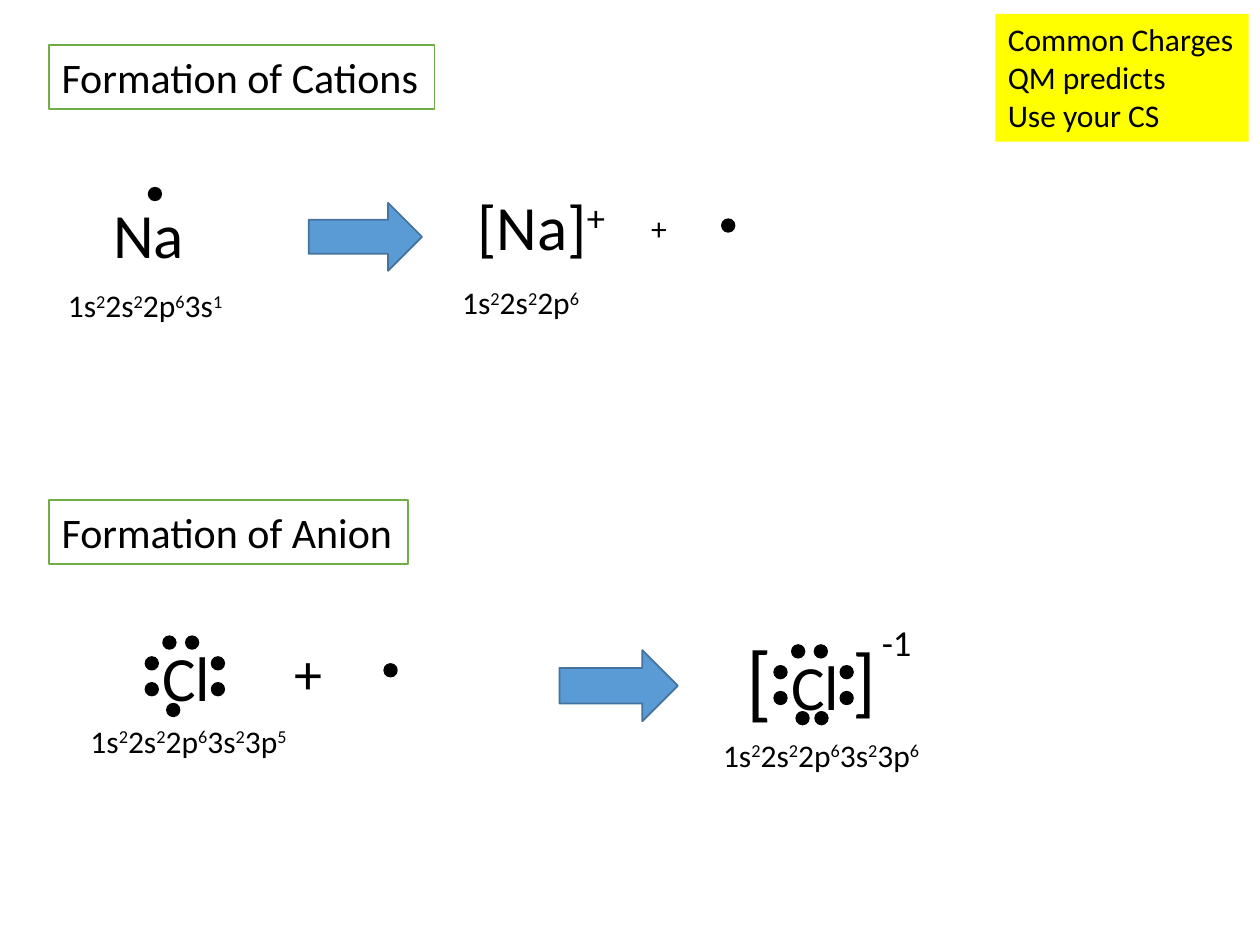
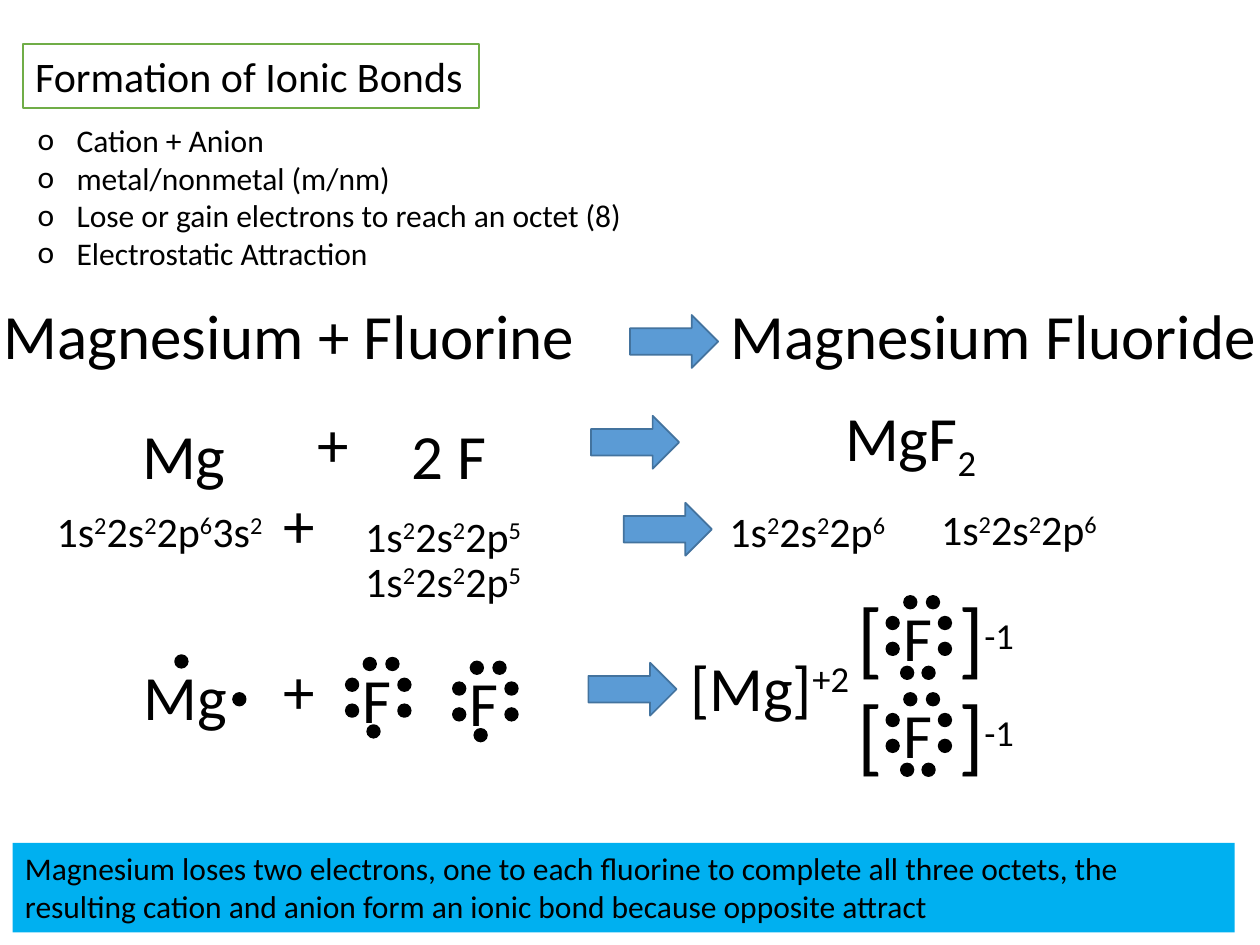
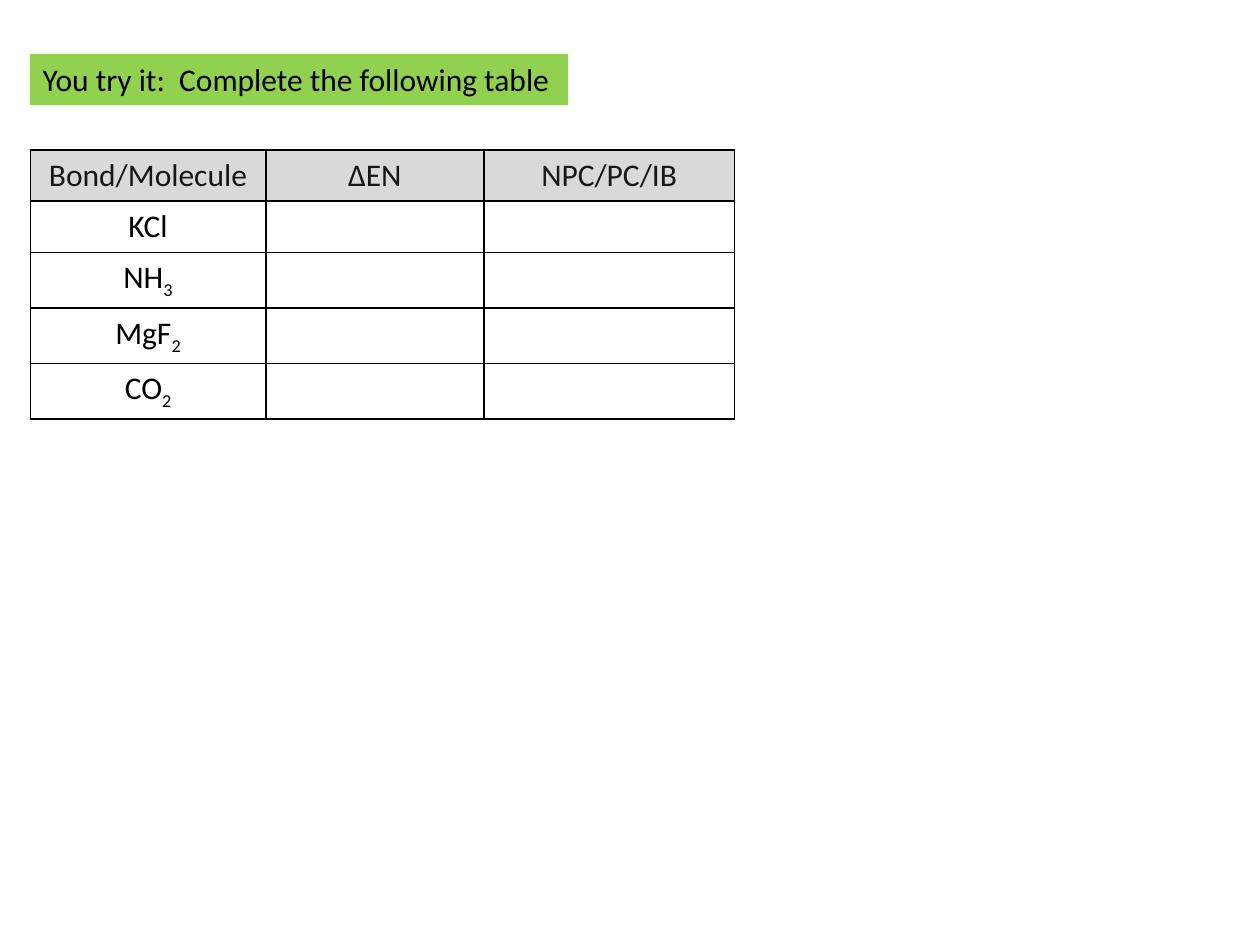
from dataclasses import dataclass

from lxml import etree
from pptx import Presentation
from pptx.dml.color import RGBColor
from pptx.enum.shapes import MSO_SHAPE
from pptx.enum.text import MSO_AUTO_SIZE, PP_ALIGN
from pptx.oxml.ns import qn
from pptx.util import Inches, Pt

ARROW, DOT = MSO_SHAPE.RIGHT_ARROW, MSO_SHAPE.OVAL
GROW, CENTER = MSO_AUTO_SIZE.SHAPE_TO_FIT_TEXT, PP_ALIGN.CENTER


@dataclass(frozen=True)
class Theme:
    font: str = "Calibri"
    ink: str = "000000"
    paper: str = "FFFFFF"
    title_line: str = "70AD47"
    arrow: str = "5B9BD5"
    arrow_line: str = "43739E"
    yellow: str = "FFFF00"
    blue: str = "00B0F0"
    green: str = "92D050"
    header: str = "D9D9D9"
    header_ink: str = "181717"
    body: int = 18
    title: int = 24
    plus: int = 32
    symbol: int = 36
    close_bracket: int = 44
    bracket: int = 48


THEME = Theme()
RAISED, LOWERED = 30, -25

# The slide is a grid of 100 columns by 75 rows
COLUMNS, ROWS = 100, 75
DOT_SIZE = 1


def grid(cells):
    return Inches(cells / 10)


def configuration(orbitals):
    """Turn '1s2 2p6' into runs with raised electron counts."""
    return [run for orbital in orbitals.split()
            for run in ((orbital[:-1], 0), (orbital[-1], RAISED))]


NEON = configuration("1s2 2s2 2p6")
FLUORINE = configuration("1s2 2s2 2p5")

# Content: titles are (text, left, top, width)
CATION_TITLE = ("Formation of Cations", 3.9, 3.6, 30.6)
ANION_TITLE = ("Formation of Anion", 3.9, 39.7, 28.5)
BOND_TITLE = ("Formation of Ionic Bonds", 1.8, 3.5, 36.2)

# Labels are (text or runs, left, top, width, size)
ION_LABELS = [
    (configuration("1s2 2s2 2p6 3s1"), 4.4, 22.2, 14.9, THEME.body),
    ([("[Na]", 0), ("+", RAISED)], 36.9, 14.4, 12.5, THEME.symbol),
    (NEON, 35.7, 22, 11.7, THEME.body),
    ("+", 50.7, 16.1, 3.3, THEME.body),
    (configuration("1s2 2s2 2p6 3s2 3p5"), 6.2, 56.8, 18.3, THEME.body),
    (configuration("1s2 2s2 2p6 3s2 3p6"), 56.4, 57.9, 18.3, THEME.body),
    ("+", 22.4, 50.2, 4.3, THEME.plus),
    ("[", 58.3, 49.3, 4.1, THEME.bracket),
    ("]", 66.7, 49.6, 3.9, THEME.close_bracket),
    ([("-1", RAISED)], 69, 48.1, 4.8, THEME.symbol),
]
BOND_LABELS = [
    ("Magnesium + Fluorine", -0.7, 23, 47.8, THEME.symbol),
    ("Magnesium Fluoride", 57, 23, 44, THEME.symbol),
    ("Mg", 10.3, 32.6, 8.7, THEME.symbol),
    ("+", 24.2, 31.6, 4.5, THEME.symbol),
    ("2 F", 31.7, 32.6, 8, THEME.symbol),
    ([("MgF", 0), ("2", LOWERED)], 66.1, 31.1, 12.7, THEME.symbol),
    (configuration("1s2 2s2 2p6 3s2"), 3.5, 39.6, 19.1, THEME.title),
    ("+", 21.5, 38, 4.5, THEME.symbol),
    (FLUORINE, 28, 40, 14.9, THEME.title),
    (FLUORINE, 28, 43.6, 14.9, THEME.title),
    (NEON, 56.9, 39.6, 14.9, THEME.title),
    (NEON, 73.7, 39.5, 14.9, THEME.title),
    ("+", 21.5, 51.2, 4.5, THEME.symbol),
    ([("[Mg]", 0), ("+2", RAISED)], 53.8, 51, 15.2, THEME.symbol),
]

# Arrows are (left, top, width)
ION_ARROWS = [(24.5, 16.1, 9), (44.4, 51.6, 9.4)]
BOND_ARROWS = [(50, 25, 7), (46.9, 33, 7), (49.5, 39.9, 7), (46.7, 52.6, 7)]
FREE_ELECTRONS = [(57.3, 17.4), (30.5, 52.7)]

# Electron places are (across, down) from the corner of the symbol's box
SYMBOL_WIDTH = {"Na": 7.7, "Mg": 8.7, "Cl": 5.9, "F": 4.3}
RIGHT_DOTS = {"Cl": 4.9, "F": 3.8}
ONE_BELOW = [(1.35, 5.65)]
CHLORIDE_BELOW = [(1.4, 5.6), (2.9, 5.6)]
FLUORIDE_BELOW = [(0.8, 5.9), (2.5, 5.9)]


def shell(symbol, below):
    """Two dots on each side and above, plus those below."""
    sides = [(x, y) for x in (-0.35, RIGHT_DOTS[symbol]) for y in (1.95, 4)]
    return sides + [(1.05, 0.3), (2.85, 0.3)] + below


# Atoms are (symbol, left, top, electrons)
ION_ATOMS = [
    ("Na", 8, 15, [(3.8, -0.1)]),
    ("Cl", 11.9, 50.2, shell("Cl", ONE_BELOW)),
    ("Cl", 61.8, 50.9, shell("Cl", CHLORIDE_BELOW)),
]
FLUORIDES = [("F", 70.7, top, shell("F", FLUORIDE_BELOW)) for top in (47, 54.7)]
BOND_ATOMS = [
    ("Mg", 10.4, 51.7, [(3.5, 0.3), (8.1, 3.3)]),
    ("F", 27.8, 51.9, shell("F", ONE_BELOW)),
    ("F", 36.3, 52.2, shell("F", ONE_BELOW)),
] + FLUORIDES

REMINDERS = ["Common Charges", "QM predicts", "Use your CS"]
BOND_FACTS = ["Cation + Anion", "metal/nonmetal (m/nm)",
              "Lose or gain electrons to reach an octet (8)",
              "Electrostatic Attraction"]
SUMMARY = ("Magnesium loses two electrons, one to each fluorine to complete "
           "all three octets, the resulting cation and anion form an ionic "
           "bond because opposite attract")
TASK = "You try it:  Complete the following table"
TABLE_HEADER = ["Bond/Molecule", "ΔEN", "NPC/PC/IB"]
MOLECULES = ["KCl", [("NH", 0), ("3", LOWERED)],
             [("MgF", 0), ("2", LOWERED)], [("CO", 0), ("2", LOWERED)]]
TABLE_COLUMNS, TABLE_ROW = [18.7, 17.3, 19.9], 4.06


def color(value):
    return RGBColor.from_string(value)


def paint(shape, fill, line=None):
    shape.fill.solid()
    shape.fill.fore_color.rgb = color(fill)
    if line:
        shape.line.color.rgb = color(line)
        shape.line.width = Pt(1)


def write(para, content, size, ink=THEME.ink):
    runs = [(content, 0)] if isinstance(content, str) else content
    for text, shift in runs:
        span = para.add_run()
        span.text = text
        span.font.name = THEME.font
        span.font.size = Pt(size)
        span.font.color.rgb = color(ink)
        if shift:
            span._r.get_or_add_rPr().set("baseline", str(shift * 1000))


def add_text(shapes, lines, left, top, width, size, wrap=False, rows=None):
    """Add one paragraph per line; the height follows from the type size."""
    height = rows or len(lines) * size * 12.2 / 72 + 1
    box = shapes.add_textbox(grid(left), grid(top), grid(width), grid(height))
    frame = box.text_frame
    frame.word_wrap = wrap
    frame.auto_size = GROW
    for index, line in enumerate(lines):
        para = frame.add_paragraph() if index else frame.paragraphs[0]
        write(para, line, size)
    return box


def add_title(slide, text, left, top, width):
    box = add_text(slide.shapes, [text], left, top, width, THEME.title)
    paint(box, THEME.paper, THEME.title_line)


def add_labels(slide, labels):
    for content, *place in labels:
        add_text(slide.shapes, [content], *place)


def add_figure(shapes, kind, left, top, width, height, fill, line):
    figure = shapes.add_shape(kind, grid(left), grid(top),
                              grid(width), grid(height))
    figure.shadow.inherit = False
    paint(figure, fill, line)


def add_arrows(slide, arrows):
    for left, top, width in arrows:
        add_figure(slide.shapes, ARROW, left, top, width, width * 0.6,
                   THEME.arrow, THEME.arrow_line)


def add_electron(shapes, left, top):
    add_figure(shapes, DOT, left, top, DOT_SIZE, DOT_SIZE,
               THEME.ink, THEME.ink)


def add_atoms(slide, atoms):
    for symbol, left, top, electrons in atoms:
        parts = slide.shapes.add_group_shape().shapes
        add_text(parts, [symbol], left, top, SYMBOL_WIDTH[symbol], THEME.symbol)
        for across, down in electrons:
            add_electron(parts, left + across, top + down)


def add_bullets(box):
    for para in box.text_frame.paragraphs:
        properties = para._p.get_or_add_pPr()
        properties.set("marL", str(grid(3.1)))
        properties.set("indent", str(-grid(3.1)))
        etree.SubElement(properties, qn("a:buFont")).set("typeface", THEME.font)
        etree.SubElement(properties, qn("a:buChar")).set("char", "o")


def add_borders(cell):
    properties = cell._tc.get_or_add_tcPr()
    for side in ("a:lnL", "a:lnR", "a:lnT", "a:lnB"):
        line = etree.SubElement(properties, qn(side), w=str(Pt(1)))
        fill = etree.SubElement(line, qn("a:solidFill"))
        etree.SubElement(fill, qn("a:srgbClr")).set("val", THEME.ink)


def build_ions(slide):
    add_title(slide, *CATION_TITLE)
    add_title(slide, *ANION_TITLE)
    add_labels(slide, ION_LABELS)
    add_arrows(slide, ION_ARROWS)
    add_atoms(slide, ION_ATOMS)
    for left, top in FREE_ELECTRONS:
        add_electron(slide.shapes, left, top)
    note = add_text(slide.shapes, REMINDERS, 79, 1.1, 20.1, THEME.body)
    paint(note, THEME.yellow)


def build_bonds(slide):
    add_title(slide, *BOND_TITLE)
    add_bullets(add_text(slide.shapes, BOND_FACTS, 2, 9.1, 49, THEME.body))
    add_labels(slide, BOND_LABELS)
    add_arrows(slide, BOND_ARROWS)
    add_atoms(slide, BOND_ATOMS)
    # Brackets and charge around each fluoride ion
    for _, left, top, _ in FLUORIDES:
        add_text(slide.shapes, ["["], left - 3.6, top - 1.1, 4.1, THEME.bracket)
        closing = add_text(slide.shapes, ["]"], left + 4.4, top - 1.1, 7,
                           THEME.bracket)
        write(closing.text_frame.paragraphs[0], [("-1", RAISED)], THEME.symbol)
    summary = add_text(slide.shapes, [SUMMARY], 1, 66.9, 97, THEME.body,
                       wrap=True, rows=7.1)
    paint(summary, THEME.blue)


def build_exercise(slide):
    task = add_text(slide.shapes, [TASK], 2.4, 4.3, 42.7, THEME.body)
    paint(task, THEME.green)
    rows = [TABLE_HEADER] + [[molecule, "", ""] for molecule in MOLECULES]
    table = slide.shapes.add_table(
        len(rows), len(TABLE_COLUMNS), grid(2.4), grid(11.9),
        grid(sum(TABLE_COLUMNS)), grid(TABLE_ROW * len(rows))).table
    table.first_row = table.horz_banding = False
    for column, width in zip(table.columns, TABLE_COLUMNS):
        column.width = grid(width)
    for row_index, row in enumerate(rows):
        table.rows[row_index].height = grid(TABLE_ROW)
        fill, ink = ((THEME.paper, THEME.ink) if row_index
                     else (THEME.header, THEME.header_ink))
        for column_index, content in enumerate(row):
            cell = table.cell(row_index, column_index)
            add_borders(cell)
            paint(cell, fill)
            para = cell.text_frame.paragraphs[0]
            para.alignment = CENTER
            if content:
                write(para, content, THEME.body, ink)


def main():
    deck = Presentation()
    deck.slide_width, deck.slide_height = grid(COLUMNS), grid(ROWS)
    blank = deck.slide_layouts[6]
    for build in (build_ions, build_bonds, build_exercise):
        build(deck.slides.add_slide(blank))
    deck.save("out.pptx")


if __name__ == "__main__":
    main()
